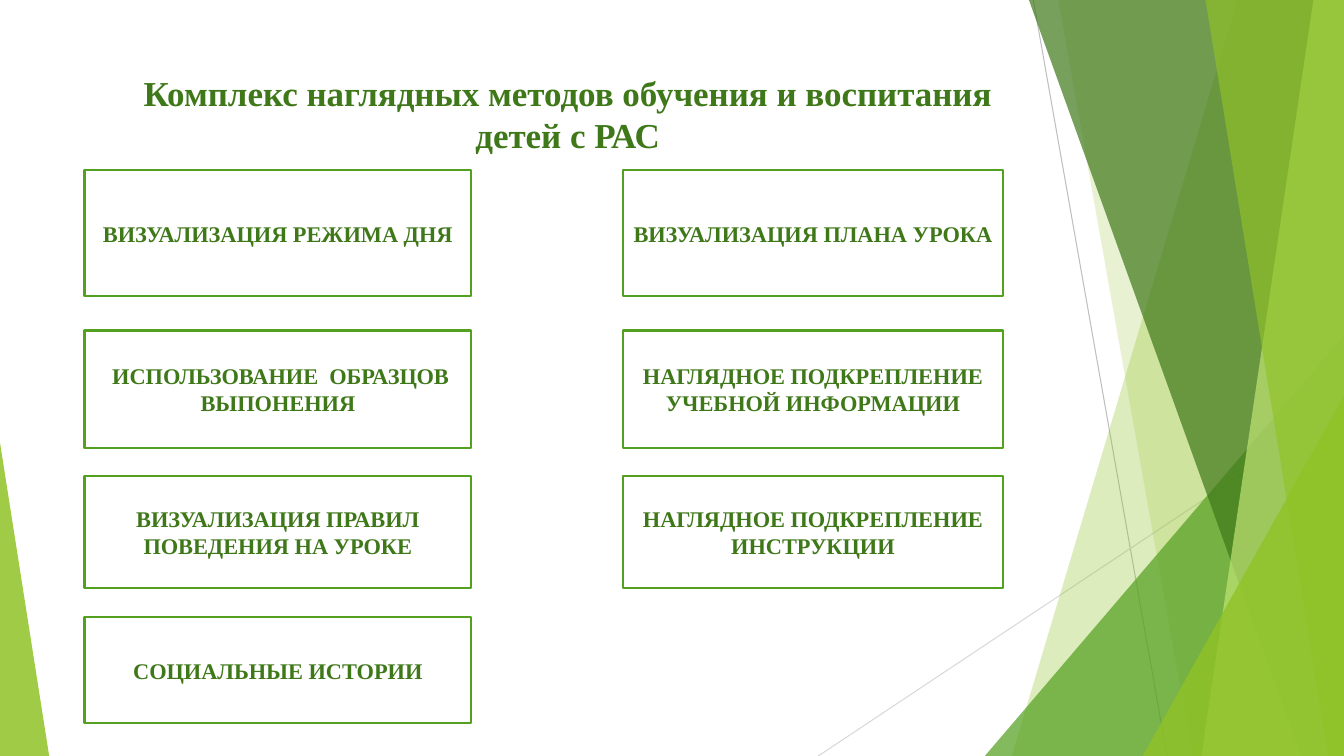
import dataclasses

import pptx
import pptx.dml.color
import pptx.enum.shapes
import pptx.enum.text
import pptx.oxml.ns
import pptx.oxml.xmlchemy
import pptx.util

Cm = pptx.util.Cm
WIDTH, HEIGHT = 33.87, 19.05


@dataclasses.dataclass(frozen=True)
class Theme:
    """Colours and type sizes of the deck."""
    font: str = "Times New Roman"
    title_size: int = 25
    card_size: int = 16
    text: str = "3F7819"
    paper: str = "FFFFFF"
    border: str = "54A021"
    lime: str = "90C226"
    pale: str = "C0E474"
    grey: str = "BFBFBF"
    light_grey: str = "D9D9D9"


THEME = Theme()

BANDS = [
    (31.19, 25.5, THEME.lime, 30),
    (26.67, 30.05, THEME.lime, 20),
    (25.93, 32.79, THEME.text, 70),
    (33.1, 30.28, THEME.pale, 70),
    (30.38, 33.48, THEME.lime, 65),
]
COLUMNS = [(0, 9.75), (13.57, 9.58)]
ROWS = [(0, 3.18), (4.04, 2.97), (7.7, 2.82), (11.25, 2.69)]
CARDS = [
    ["ВИЗУАЛИЗАЦИЯ РЕЖИМА ДНЯ", "ВИЗУАЛИЗАЦИЯ ПЛАНА УРОКА"],
    [" ИСПОЛЬЗОВАНИЕ  ОБРАЗЦОВ ВЫПОНЕНИЯ",
     "НАГЛЯДНОЕ ПОДКРЕПЛЕНИЕ УЧЕБНОЙ ИНФОРМАЦИИ"],
    ["ВИЗУАЛИЗАЦИЯ ПРАВИЛ ПОВЕДЕНИЯ НА УРОКЕ",
     "НАГЛЯДНОЕ ПОДКРЕПЛЕНИЕ ИНСТРУКЦИИ"],
    ["СОЦИАЛЬНЫЕ ИСТОРИИ"],
]


def rgb(colour):
    """Turn a hex string into a colour."""
    return pptx.dml.color.RGBColor.from_string(colour)


def paint(shape, colour, opacity):
    """Give a shape a see-through fill without outline or shadow."""
    shape.shadow.inherit = False
    shape.fill.solid()
    shape.fill.fore_color.rgb = rgb(colour)
    shape.line.fill.background()
    fill = shape.element.spPr.find(pptx.oxml.ns.qn("a:solidFill"))
    alpha = pptx.oxml.xmlchemy.OxmlElement("a:alpha")
    alpha.set("val", str(opacity * 1000))
    fill[0].append(alpha)


def add_hairline(page, start, end, colour):
    """Draw a thin line between two points."""
    line = page.shapes.add_connector(
        pptx.enum.shapes.MSO_CONNECTOR.STRAIGHT, *map(Cm, start + end))
    line.line.color.rgb = rgb(colour)
    line.line.width = pptx.util.Pt(0.75)
    line.element.spPr.append(pptx.oxml.xmlchemy.OxmlElement("a:effectLst"))


def add_band(page, top_x, bottom_x, colour, opacity):
    """Fill the page from a slanted edge to its right side."""
    builder = page.shapes.build_freeform(Cm(top_x), 0)
    corners = [(WIDTH, 0), (WIDTH, HEIGHT), (bottom_x, HEIGHT)]
    builder.add_line_segments([(Cm(x), Cm(y)) for x, y in corners])
    paint(builder.convert_to_shape(), colour, opacity)


def add_triangle(page, left, top, width, apex, colour, opacity):
    """Stand a right triangle on the bottom edge of the page."""
    triangle = page.shapes.add_shape(
        pptx.enum.shapes.MSO_SHAPE.ISOSCELES_TRIANGLE,
        Cm(left), Cm(top), Cm(width), Cm(HEIGHT - top))
    triangle.adjustments[0] = apex
    paint(triangle, colour, opacity)


def add_facets(page):
    """Draw the green facets at both sides of the page."""
    add_hairline(page, (26.04, 0), (29.41, HEIGHT), THEME.grey)
    add_hairline(page, (WIDTH, 10.24), (20.62, HEIGHT), THEME.light_grey)
    for band in BANDS[:2]:
        add_band(page, *band)
    add_triangle(page, 24.82, 8.46, WIDTH - 24.82, 1, THEME.border, 72)
    for band in BANDS[2:]:
        add_band(page, *band)
    add_triangle(page, 28.8, 9.98, WIDTH - 28.8, 1, THEME.lime, 80)
    add_triangle(page, 0, 11.15, 1.24, 0, THEME.lime, 85)


def write(shape, text, size):
    """Put one bold centred paragraph into a shape."""
    shape.text_frame.word_wrap = True
    para = shape.text_frame.paragraphs[0]
    para.alignment = pptx.enum.text.PP_ALIGN.CENTER
    span = para.add_run()
    span.text = text
    span.font.name = THEME.font
    span.font.size = pptx.util.Pt(size)
    span.font.bold = True
    span.font.color.rgb = rgb(THEME.text)


def add_title(page, left, top, width, height):
    """Write the heading in the given box."""
    box = page.shapes.add_textbox(Cm(left), Cm(top), Cm(width), Cm(height))
    write(box, "Комплекс наглядных методов обучения и воспитания детей с РАС",
          THEME.title_size)


def add_card(page, left, top, width, height, text):
    """Draw one outlined card with its label."""
    card = page.shapes.add_shape(
        pptx.enum.shapes.MSO_SHAPE.RECTANGLE,
        Cm(left), Cm(top), Cm(width), Cm(height))
    card.shadow.inherit = False
    card.fill.solid()
    card.fill.fore_color.rgb = rgb(THEME.paper)
    card.line.color.rgb = rgb(THEME.border)
    card.line.width = pptx.util.Pt(1.5)
    frame = card.text_frame
    frame.margin_left = frame.margin_right = Cm(0.2)
    frame.vertical_anchor = pptx.enum.text.MSO_ANCHOR.MIDDLE
    write(card, text, THEME.card_size)


def add_cards(page, left, top):
    """Lay out the method cards in rows and columns."""
    for (down, height), labels in zip(ROWS, CARDS):
        for (across, width), label in zip(COLUMNS, labels):
            add_card(page, left + across, top + down, width, height, label)


def main():
    """Build and save the deck."""
    deck = pptx.Presentation()
    deck.slide_width, deck.slide_height = Cm(WIDTH), Cm(HEIGHT)
    page = deck.slides.add_slide(deck.slide_layouts[6])
    add_facets(page)
    add_title(page, 2.29, 1.68, 24.03, 4.24)
    add_cards(page, 2.13, 4.29)
    deck.save("out.pptx")


if __name__ == "__main__":
    main()
